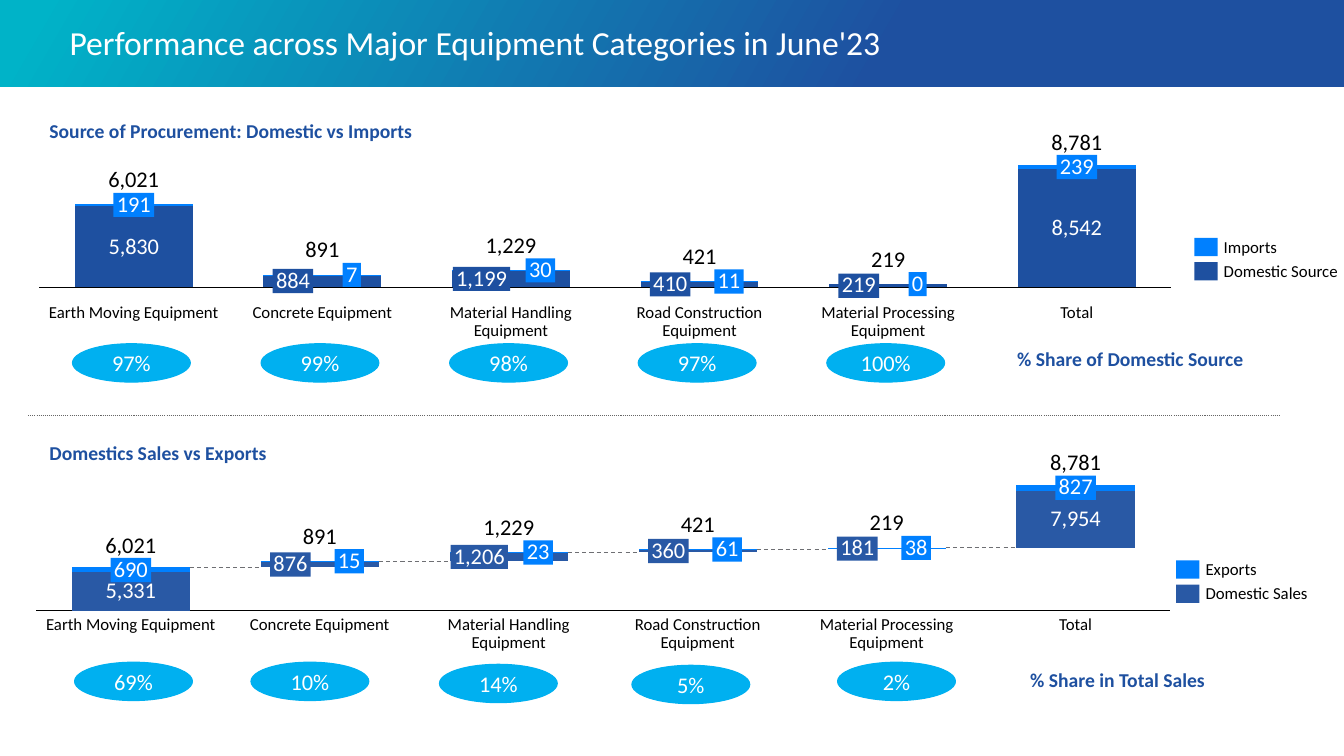
from dataclasses import dataclass
from itertools import accumulate

import pptx
import pptx.chart.data
import pptx.dml.color
import pptx.enum.chart
import pptx.enum.dml
import pptx.enum.shapes
import pptx.enum.text
import pptx.oxml
import pptx.oxml.ns
import pptx.util

Pt = pptx.util.Pt
RGB = pptx.dml.color.RGBColor
SHAPE = pptx.enum.shapes.MSO_SHAPE
ALIGN = pptx.enum.text.PP_ALIGN
ANCHOR = pptx.enum.text.MSO_ANCHOR
DASH = pptx.enum.dml.MSO_LINE

TEAL, NAVY, BLUE = RGB(0x00, 0xB3, 0xC8), RGB(0x1E, 0x50, 0xA0), RGB(0x29, 0x59, 0xA5)
BRIGHT, SKY = RGB(0x00, 0x80, 0xFF), RGB(0x00, 0xB0, 0xF0)
WHITE, BLACK = RGB(0xFF, 0xFF, 0xFF), RGB(0, 0, 0)
DIVIDER_GRAY, STEP_GRAY = RGB(0x66, 0x66, 0x66), RGB(0x6E, 0x6F, 0x73)

FONT = "Calibri"
CATEGORIES = [("Earth Moving Equipment", 124.6), ("Concrete Equipment", 100.8),
              ("Material Handling Equipment", 88), ("Road Construction Equipment", 91),
              ("Material Processing Equipment", 96.5), ("Total", 24.5)]
LAST = len(CATEGORIES) - 1
TAG_HEIGHT = 17.3
TAG_WIDTHS = {1: 13, 2: 21, 3: 29, 5: 41}  # by number of characters
GAP_WIDTH = 60
PLOT_X, PLOT_W = 0.008, 0.984


@dataclass
class Panel:
    """One chart region; the dx and dy lengths are measured from the chart box."""
    heading: str
    heading_dy: float
    domestic: list
    other: list
    stepped: bool
    color: RGB
    plot_y: float
    names_dy: float
    legend: tuple
    legend_at: tuple
    shares: list
    share_at: list
    caption: str
    caption_at: tuple


PROCUREMENT = Panel(
    "Source of Procurement: Domestic vs Imports", -26.6,
    [5830, 884, 1199, 410, 219, 8542], [191, 7, 30, 11, 0, 239], False, NAVY, 0.065, 105.8,
    ("Imports", "Domestic Source"), (831.6, 58.3),
    ["97%", "99%", "98%", "97%", "100%"],
    [(30.2 + 134.7 * i, 133.9) for i in range(5)],
    "% Share of Domestic Source", (704.9, 136.1))
SALES = Panel(
    "Domestics Sales vs Exports", -24.5,
    [5331, 876, 1206, 360, 181, 7954], [690, 15, 23, 61, 38, 827], True, BLUE, 0.063, 100.1,
    ("Exports", "Domestic Sales"), (820.8, 60.5),
    ["69%", "10%", "14%", "5%", "2%"],
    [(33.9, 133.2), (159.9, 133.2), (294.5, 134.7), (432, 135.4), (578.9, 133.2)],
    "% Share in Total Sales", (716.4, 137.6))


def add_text(s, box, text, size, color, align=ALIGN.LEFT, anchor=ANCHOR.TOP, bold=False,
             wrap=False, margin=0, spacing=0.9, shape=None, fill=None):
    """Add a text box, or a filled preset shape when one is named."""
    box = [Pt(v) for v in box]
    if shape is None:
        sp = s.shapes.add_textbox(*box)
    else:
        sp = s.shapes.add_shape(shape, *box)
        sp.shadow.inherit = False
        sp.fill.solid()
        sp.fill.fore_color.rgb = fill
        sp.line.fill.background()
    tf = sp.text_frame
    tf.text = text
    tf.word_wrap = wrap
    tf.vertical_anchor = anchor
    tf.margin_left = tf.margin_right = Pt(margin)
    tf.margin_top = tf.margin_bottom = 0
    p = tf.paragraphs[0]
    p.alignment = align
    p.line_spacing = spacing
    for r in p.runs:
        r.font.name, r.font.size, r.font.bold = FONT, Pt(size), bold
        r.font.color.rgb = color
    return sp


def add_tag(s, center, top, value, fill=None):
    text = f"{value:,}"
    width = TAG_WIDTHS[len(text)]
    add_text(s, (center - width / 2, top, width, TAG_HEIGHT), text, 16,
             WHITE if fill else BLACK, ALIGN.CENTER, ANCHOR.MIDDLE if fill else ANCHOR.BOTTOM,
             margin=2.2, shape=SHAPE.RECTANGLE if fill else None, fill=fill)


def add_dashed_line(s, x1, x2, y, color, dash):
    line = s.shapes.add_connector(pptx.enum.shapes.MSO_CONNECTOR.STRAIGHT,
                                  Pt(x1), Pt(y), Pt(x2), Pt(y))
    line.line.color.rgb, line.line.width, line.line.dash_style = color, Pt(0.75), dash
    line._element.spPr.append(pptx.oxml.parse_xml(
        f'<a:effectLst {pptx.oxml.ns.nsdecls("a")}/>'))


def set_fill(item, color):
    if color is None:
        item.format.fill.background()
    else:
        item.format.fill.solid()
        item.format.fill.fore_color.rgb = color


def draw_chart(s, box, panel, bases, peak):
    data = pptx.chart.data.CategoryChartData(number_format="#,##0")
    data.categories = [str(i + 1) for i in range(len(CATEGORIES))]
    if panel.stepped:
        rows = [panel.domestic[:1] + bases[1:], panel.other[:1] + panel.domestic[1:],
                [None] + panel.other[1:]]
        colors = [None, panel.color, BRIGHT]
    else:
        rows, colors = [panel.domestic, panel.other], [panel.color, BRIGHT]
    for i, row in enumerate(rows):
        data.add_series(f"Series {i + 1}", row)
    chart = s.shapes.add_chart(pptx.enum.chart.XL_CHART_TYPE.COLUMN_STACKED,
                               *[Pt(v) for v in box], data).chart
    chart.has_legend = chart.has_title = False
    chart.font.name, chart.font.size = FONT, Pt(10)
    chart.font.color.rgb = BLACK
    plot = chart.plots[0]
    plot.gap_width, plot.overlap, plot.vary_by_categories = GAP_WIDTH, 100, False
    for series, color in zip(plot.series, colors):
        set_fill(series, color)
    first, second = plot.series[0], plot.series[1]
    if panel.stepped:
        set_fill(first.points[0], panel.color)
        set_fill(second.points[0], BRIGHT)
    for series, i in ((first, 0), (second if panel.stepped else first, LAST)):
        series.data_labels.show_value = False
        font = series.points[i].data_label.font
        font.name, font.size = FONT, Pt(16)
        font.color.rgb = WHITE
        for body in series.data_labels._element.iter(pptx.oxml.ns.qn("a:bodyPr")):
            body.set("wrap", "none")

    names, values = chart.category_axis, chart.value_axis
    names.tick_label_position = pptx.enum.chart.XL_TICK_LABEL_POSITION.NONE
    names.major_tick_mark = pptx.enum.chart.XL_TICK_MARK.NONE
    names.format.line.color.rgb, names.format.line.width = BLACK, Pt(0.75)
    values.visible = values.has_major_gridlines = False
    values.minimum_scale, values.maximum_scale = 0, peak

    area = chart._chartSpace.chart.plotArea
    for old in area.findall(pptx.oxml.ns.qn("c:layout")):
        area.remove(old)
    frame = zip("xywh", (PLOT_X, panel.plot_y, PLOT_W, 1 - 2 * panel.plot_y))
    area.insert(0, pptx.oxml.parse_xml(
        f'<c:layout {pptx.oxml.ns.nsdecls("c")}><c:manualLayout><c:layoutTarget val="inner"/>'
        '<c:xMode val="edge"/><c:yMode val="edge"/>'
        + "".join(f'<c:{k} val="{v}"/>' for k, v in frame)
        + "</c:manualLayout></c:layout>"))


def draw_panel(s, box, panel):
    left, top, width, height = box
    totals = [a + b for a, b in zip(panel.domestic, panel.other)]
    bases = [0] + list(accumulate(totals[:-1])) if panel.stepped else [0] * len(totals)
    peak = max(b + t for b, t in zip(bases, totals))
    draw_chart(s, box, panel, bases, peak)
    add_text(s, (35.3, top + panel.heading_dy, 264, 17.3), panel.heading, 14, NAVY,
             bold=True, wrap=True, spacing=1)

    def y_of(value):
        return top + height * (1 - panel.plot_y - value / peak * (1 - 2 * panel.plot_y))

    step = width * PLOT_W / len(CATEGORIES)
    bar = step / (1 + GAP_WIDTH / 100)
    for i, (name, name_width) in enumerate(CATEGORIES):
        center = left + width * PLOT_X + step * (i + 0.5)
        domestic, other, end = panel.domestic[i], panel.other[i], bases[i] + totals[i]
        shift = 0 if i in (0, LAST) else 21
        tag_top = y_of(end - other / 2) - TAG_HEIGHT / 2
        if shift:
            add_tag(s, center - shift, y_of(bases[i] + domestic / 2) - TAG_HEIGHT / 2,
                    domestic, panel.color)
        add_tag(s, center + shift, tag_top, other, BRIGHT)
        add_tag(s, center, tag_top - TAG_HEIGHT, totals[i])
        two_lines = 2 <= i < LAST
        add_text(s, (center - name_width / 2, top + panel.names_dy, name_width,
                     26 if two_lines else 13), name, 12, BLACK, ALIGN.CENTER, wrap=two_lines)
        if panel.stepped and i < LAST:
            add_dashed_line(s, center + bar / 2, center + step - bar / 2, y_of(end),
                            STEP_GRAY, DASH.DASH)

    for share, (dx, dy) in zip(panel.shares, panel.share_at):
        oval = add_text(s, (left + dx, top + dy, 84.2, 27.4), share, 16, WHITE, ALIGN.CENTER,
                        ANCHOR.MIDDLE, wrap=True, spacing=1, shape=SHAPE.OVAL, fill=SKY)
        oval.line.color.rgb, oval.line.width = SKY, Pt(0.8)
    dx, dy = panel.caption_at
    add_text(s, (left + dx, top + dy, 181, 17.3), panel.caption, 14, NAVY,
             bold=True, wrap=True, spacing=1)

    dx, dy = panel.legend_at
    for i, (name, color) in enumerate(zip(panel.legend, (BRIGHT, panel.color))):
        y = top + dy + 17.3 * i
        add_text(s, (left + dx, y, 16.6, 13), "", 12, WHITE, shape=SHAPE.RECTANGLE, fill=color)
        add_text(s, (left + dx + 20.9, y + 0.5, 82, 13), name, 12, BLACK, anchor=ANCHOR.MIDDLE)


def draw_header(s, box, title):
    left, top, width, height = box
    band = s.shapes.add_shape(SHAPE.RECTANGLE, *[Pt(v) for v in box])
    band.shadow.inherit = False
    band.line.fill.background()
    band.fill.gradient()
    band.fill.gradient_angle = 330
    for stop, position, color in zip(band.fill.gradient_stops, (0.03, 0.66), (TEAL, NAVY)):
        stop.position, stop.color.rgb = position, color
    add_text(s, (left + 49.7, top + 18.7, width - 99, 26), title, 24, WHITE, wrap=True)


def main():
    prs = pptx.Presentation()
    prs.slide_width, prs.slide_height = Pt(960), Pt(540)
    s = prs.slides.add_slide(prs.slide_layouts[6])
    draw_header(s, (0, 0, 960, 62), "Performance across Major Equipment Categories in June'23")
    draw_panel(s, (21.6, 111.6, 821.5, 100.1), PROCUREMENT)
    add_dashed_line(s, 20.2, 913.7, 296.6, DIVIDER_GRAY, DASH.ROUND_DOT)
    draw_panel(s, (19.4, 339.8, 823, 103), SALES)
    prs.save("out.pptx")


if __name__ == "__main__":
    main()
